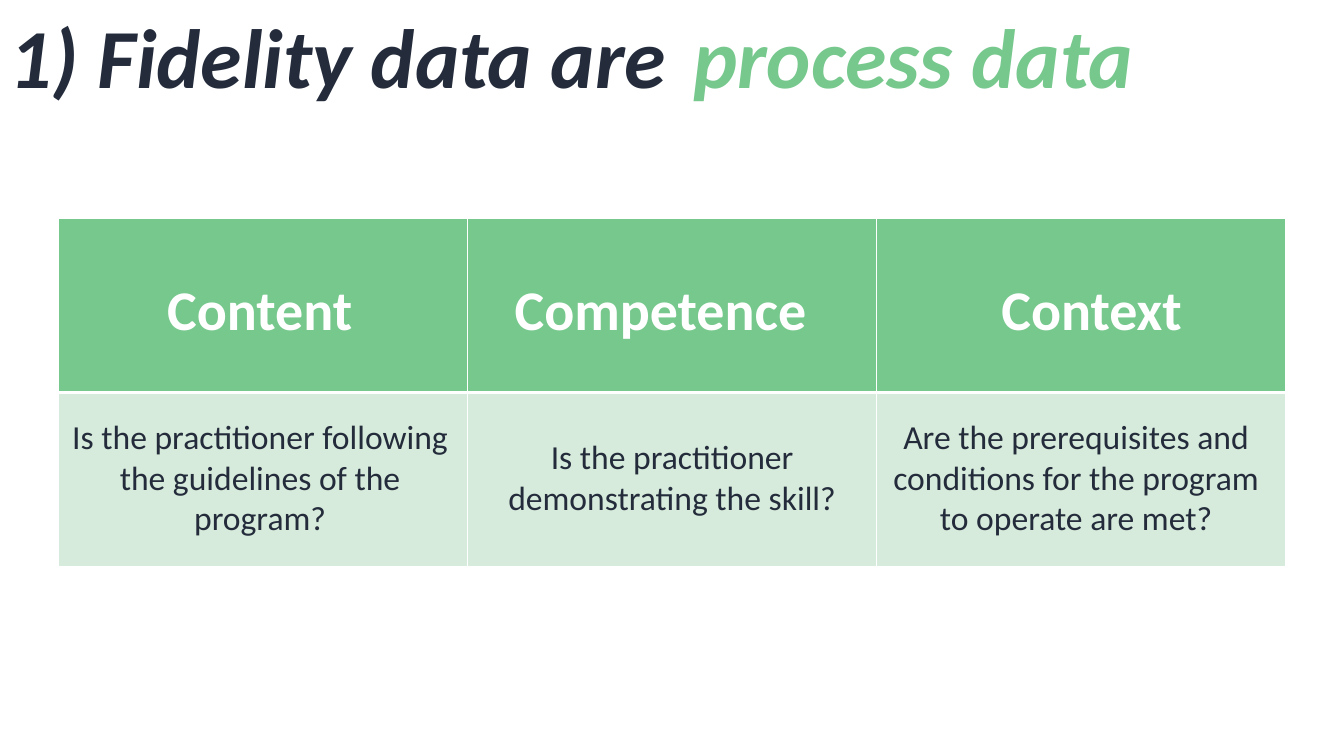
from lxml.etree import SubElement
from pptx import Presentation
from pptx.dml.color import RGBColor
from pptx.enum.text import MSO_AUTO_SIZE as AutoSize, PP_ALIGN as Align
from pptx.oxml.ns import qn
from pptx.util import Inches, Pt

WIDTH, HEIGHT = 13.33, 7.5
FONT = "Calibri"
NAVY = RGBColor(0x24, 0x2C, 0x3C)
GREEN = RGBColor(0x76, 0xC8, 0x8D)
PALE_GREEN = RGBColor(0xD6, 0xEB, 0xDB)
WHITE = RGBColor(0xFF, 0xFF, 0xFF)

TITLE_BOX = (0, 0, 12.07, 1.11)
TABLE_BOX = (0.58, 2.17, 12.17, 3.45)
HEADING_TOP, HEADING_HEIGHT = 0.5, 0.77
QUESTION_WIDTH, QUESTION_MIDDLE = 4, 2.56
LINE_HEIGHT, BOX_PADDING = 0.4, 0.1

# Each column: heading, heading offset, heading width, question, question offset, lines
COLUMNS = [
    ("Content", 0.98, 2.06,
     "Is the practitioner following the guidelines of the program?", 0, 3),
    ("Competence", 0.37, 3.12,
     "Is the practitioner demonstrating the skill?", 0.03, 2),
    ("Context", 1.14, 2.01,
     "Are the prerequisites and conditions for the program to operate are met?", -0.02, 3),
]


def add_label(slide, box, text, size, color, align=Align.LEFT, wrap=True, bold=False, italic=False):
    """Place one line or paragraph of text in a box that fits it."""
    frame = slide.shapes.add_textbox(*map(Inches, box)).text_frame
    frame.word_wrap = wrap
    frame.auto_size = AutoSize.SHAPE_TO_FIT_TEXT
    paragraph = frame.paragraphs[0]
    paragraph.alignment = align
    run = paragraph.add_run()
    run.text = text
    font = run.font
    font.name, font.size, font.bold, font.italic = FONT, Pt(size), bold, italic
    font.color.rgb = color


def style_cell(cell, fill, bottom, top):
    """Fill a table cell and rule its four sides in white."""
    properties = cell._tc.get_or_add_tcPr()
    for side, width in (("L", 1), ("R", 1), ("T", top), ("B", bottom)):
        line = SubElement(properties, qn(f"a:ln{side}"), w=str(Pt(width)))
        solid = SubElement(line, qn("a:solidFill"))
        SubElement(solid, qn("a:srgbClr"), val=str(WHITE))
    cell.fill.solid()
    cell.fill.fore_color.rgb = fill


def add_title(slide, box):
    """Write the two-colour title across the top."""
    left, top, width, height = box
    style = {"bold": True, "italic": True}
    add_label(slide, box, "1) Fidelity data are", 60, NAVY, **style)
    add_label(slide, (left + 6.75, top, 4.61, height), "process data", 60, GREEN,
              Align.CENTER, wrap=False, **style)


def add_grid(slide, box):
    """Draw the green heading row and the pale question row."""
    table = slide.shapes.add_table(2, len(COLUMNS), *map(Inches, box)).table
    for row, (fill, top, bottom) in enumerate(((GREEN, 1, 3), (PALE_GREEN, 3, 1))):
        for column in range(len(COLUMNS)):
            style_cell(table.cell(row, column), fill, bottom, top)


def add_column_text(slide, box):
    """Write a heading and a question over each column of the grid."""
    left, top, width, height = box
    step = width / len(COLUMNS)
    for index, (heading, inset, heading_width, *_) in enumerate(COLUMNS):
        heading_box = (left + index * step + inset, top + HEADING_TOP, heading_width, HEADING_HEIGHT)
        add_label(slide, heading_box, heading, 40, WHITE, wrap=False, bold=True)
    for index, (*_, question, shift, lines) in enumerate(COLUMNS):
        question_height = lines * LINE_HEIGHT + BOX_PADDING
        question_box = (left + index * step + shift, top + QUESTION_MIDDLE - question_height / 2,
                        QUESTION_WIDTH, question_height)
        add_label(slide, question_box, question, 24, NAVY, Align.CENTER)


def main():
    """Build and save the slide."""
    presentation = Presentation()
    presentation.slide_width, presentation.slide_height = Inches(WIDTH), Inches(HEIGHT)
    slide = presentation.slides.add_slide(presentation.slide_layouts[6])
    add_grid(slide, TABLE_BOX)
    add_title(slide, TITLE_BOX)
    add_column_text(slide, TABLE_BOX)
    presentation.save("out.pptx")


if __name__ == "__main__":
    main()
